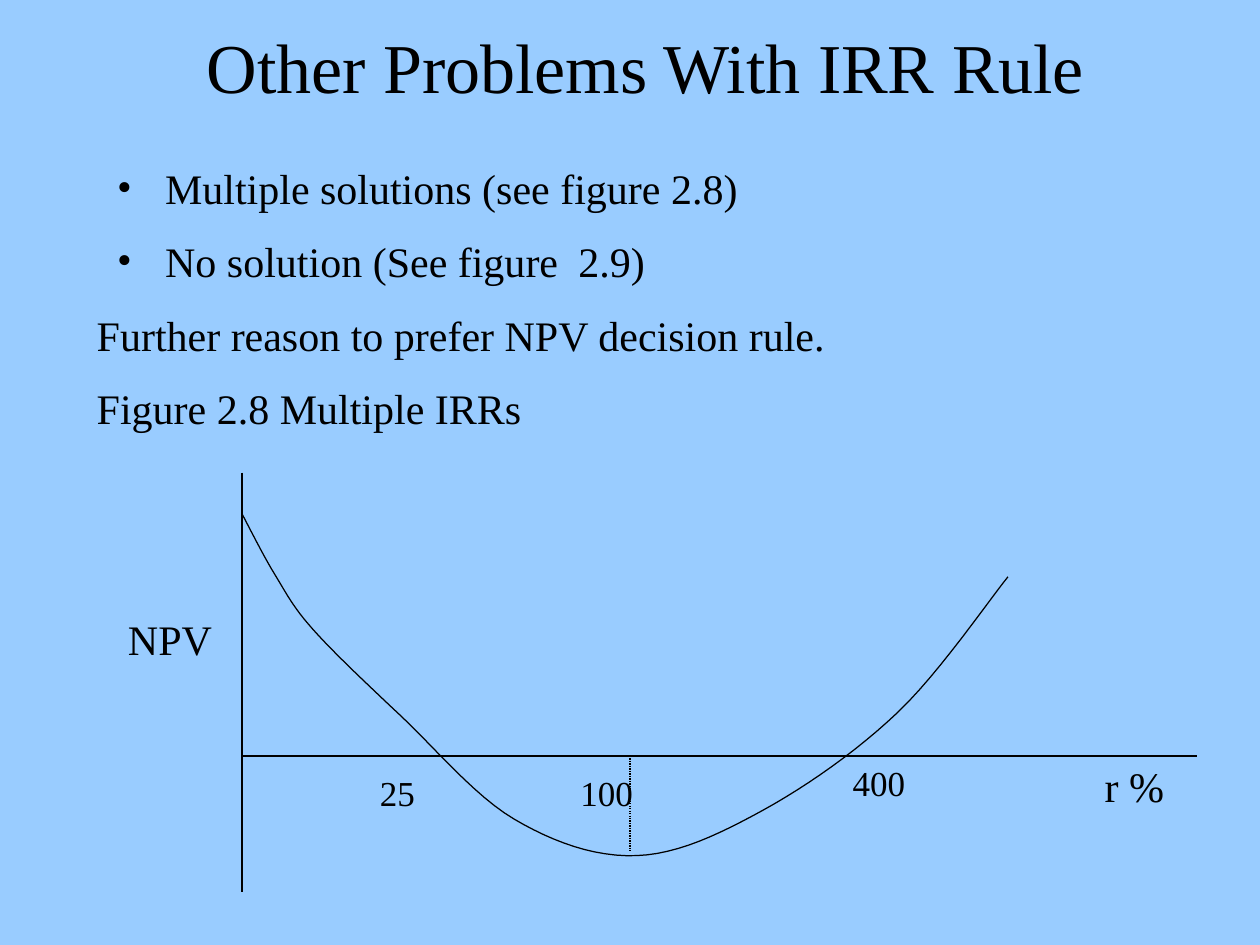
from lxml.etree import SubElement
from pptx import Presentation
from pptx.dml.color import RGBColor
from pptx.enum.dml import MSO_LINE
from pptx.enum.shapes import MSO_SHAPE
from pptx.enum.text import MSO_ANCHOR
from pptx.oxml.ns import qn
from pptx.util import Cm, Pt

FONT = "Times New Roman"
BLACK = "000000"
SKY = "99CCFF"
LINE_WIDTH = 0.72
SLIDE_WIDTH, SLIDE_HEIGHT = 25.4, 19.05
ORIGIN_X, AXIS_Y = 4.88, 15.24
MINIMUM_X = 12.7
VERTICAL_AXIS = [(ORIGIN_X, 9.53), (ORIGIN_X, 17.98)]
HORIZONTAL_AXIS = [(ORIGIN_X, AXIS_Y), (24.13, AXIS_Y)]
CURVE_KNOTS = [
    (ORIGIN_X, 10.36), (5.54, 11.58), (6.32, 12.7), (8.1, 14.45),
    (10.36, 16.51), (12.83, 17.25), (15.39, 16.33), (18.11, 14.35),
    (20.32, 11.63),
]
# text, left, top, width, size
LABELS = [
    ("25", 7.62, 15.52, 0.8, 20),
    ("100", 11.66, 15.52, 1.15, 20),
    ("400", 17.15, 15.32, 1.15, 20),
    ("NPV", 2.54, 12.34, 1.8, 24),
    ("r %", 22.23, 15.31, 1.3, 24),
]


def color(hex_string):
    return RGBColor.from_string(hex_string)


def add_backdrop(slide):
    backdrop = slide.shapes.add_shape(
        MSO_SHAPE.RECTANGLE, 0, 0, Cm(SLIDE_WIDTH), Cm(SLIDE_HEIGHT))
    backdrop.shadow.inherit = False
    backdrop.fill.solid()
    backdrop.fill.fore_color.rgb = color(SKY)
    backdrop.line.fill.background()


def add_text_box(slide, left, top, width, height, inset=0.03):
    box = slide.shapes.add_textbox(Cm(left), Cm(top), Cm(width), Cm(height))
    frame = box.text_frame
    frame.word_wrap = True
    frame.vertical_anchor = MSO_ANCHOR.TOP
    frame.margin_left = frame.margin_right = frame.margin_bottom = 0
    frame.margin_top = Cm(inset)
    return frame


def write(paragraph, text, size=24, before=0, indent=0, hanging=0,
          bullet=None, tab=None):
    """Fill a paragraph; indents and the tab stop are in centimetres."""
    paragraph.space_before = Pt(before)
    run = paragraph.add_run()
    run.text = text
    run.font.name = FONT
    run.font.size = Pt(size)
    run.font.color.rgb = color(BLACK)
    properties = paragraph._p.get_or_add_pPr()
    properties.set("marL", str(Cm(indent)))
    properties.set("indent", str(-Cm(hanging)))
    if bullet:
        SubElement(properties, qn("a:buFont"), typeface=FONT)
        SubElement(properties, qn("a:buChar"), char=bullet)
    if tab:
        tabs = SubElement(properties, qn("a:tabLst"))
        SubElement(tabs, qn("a:tab"), pos=str(Cm(tab)), algn="l")


def add_body(slide):
    frame = add_text_box(slide, 1.91, 2.77, 14.73, 6, inset=0.5)
    bulleted = {"indent": 1.42, "hanging": 0.97, "bullet": "•"}
    lines = [
        ("Multiple solutions (see figure 2.8)", bulleted),
        ("No solution (See figure\t2.9)", {**bulleted, "tab": 9.75}),
        ("Further reason to prefer NPV decision rule.", {"indent": 0.04}),
        ("Figure 2.8 Multiple IRRs", {"indent": 0.04}),
    ]
    for index, (text, layout) in enumerate(lines):
        paragraph = frame.add_paragraph() if index else frame.paragraphs[0]
        write(paragraph, text, before=13.2, **layout)


def style_line(shape):
    shape.line.color.rgb = color(BLACK)
    shape.line.width = Pt(LINE_WIDTH)


def add_dotted_line(slide, x1, y1, x2, y2):
    line = slide.shapes.add_connector(1, Cm(x1), Cm(y1), Cm(x2), Cm(y2))
    style_line(line)
    line.line.dash_style = MSO_LINE.ROUND_DOT
    SubElement(line._element.spPr, qn("a:effectLst"))


def smooth_points(knots, steps=12):
    """Points on a Catmull-Rom spline through the knots."""
    padded = [knots[0], *knots, knots[-1]]
    points = [knots[0]]
    for a, b, c, d in zip(padded, padded[1:], padded[2:], padded[3:]):
        for step in range(1, steps + 1):
            t = step / steps
            points.append(tuple(
                (2 * q + (r - p) * t + (2 * p - 5 * q + 4 * r - s) * t**2
                 + (3 * q - p - 3 * r + s) * t**3) / 2
                for p, q, r, s in zip(a, b, c, d)))
    return points


def add_open_paths(slide, *paths):
    """Draw several open paths as one outline."""
    builder = slide.shapes.build_freeform(*map(Cm, paths[0][0]))
    for index, path in enumerate(paths):
        points = [(Cm(x), Cm(y)) for x, y in path]
        if index:
            builder.move_to(*points[0])
        builder.add_line_segments(points[1:], close=False)
    outline = builder.convert_to_shape()
    outline.shadow.inherit = False
    outline.fill.background()
    style_line(outline)


def main():
    presentation = Presentation()
    presentation.slide_width = Cm(SLIDE_WIDTH)
    presentation.slide_height = Cm(SLIDE_HEIGHT)
    slide = presentation.slides.add_slide(presentation.slide_layouts[6])
    add_backdrop(slide)

    title = add_text_box(slide, 3.1, 0.44, 19.2, 1.75)
    write(title.paragraphs[0], "Other Problems With IRR Rule", size=40,
          indent=1.07)
    add_body(slide)

    add_open_paths(slide, VERTICAL_AXIS, HORIZONTAL_AXIS,
                   smooth_points(CURVE_KNOTS))
    for text, left, top, width, size in LABELS:
        frame = add_text_box(slide, left, top, width, size * 0.045)
        write(frame.paragraphs[0], text, size=size, indent=0.04)
    add_dotted_line(slide, MINIMUM_X, AXIS_Y, MINIMUM_X, 17.15)

    presentation.save("out.pptx")


if __name__ == "__main__":
    main()
